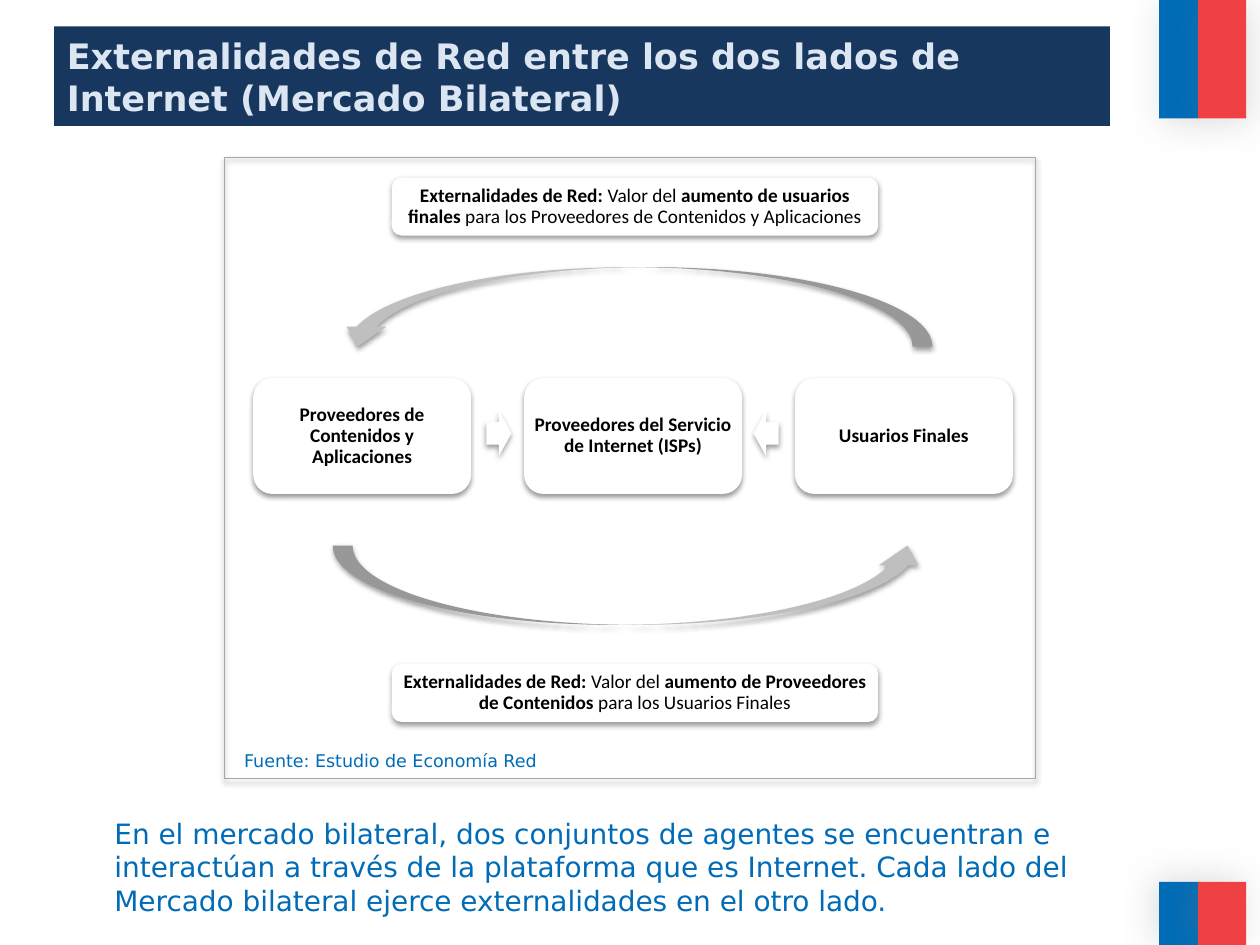
from lxml.etree import SubElement
from pptx import Presentation
from pptx.dml.color import RGBColor
from pptx.enum.shapes import MSO_SHAPE
from pptx.enum.text import MSO_ANCHOR, PP_ALIGN
from pptx.oxml.ns import qn
from pptx.util import Inches, Pt

rgb = RGBColor.from_string
BLUE, RED, NAVY = "006CB7", "EF4144", "17375E"
SOFT = ("000000", 38, 3.1, 1.6, 90)  # colour, opacity %, blur pt, distance pt, angle


def add_shape(kind, box, fill=None, shadow=SOFT):
    sp = s.shapes.add_shape(kind, *map(Inches, box))
    if fill:
        sp.fill.solid()
        sp.fill.fore_color.rgb = rgb(fill)
    else:
        sp.fill.background()
    sp.line.fill.background()
    sp.shadow.inherit = False
    color, opacity, blur, dist, angle = shadow
    effects = sp._element.spPr.find(qn("a:effectLst"))
    outer = SubElement(effects, qn("a:outerShdw"), blurRad=str(Pt(blur)),
                       dist=str(Pt(dist)), dir=str(angle * 60000), rotWithShape="0")
    clr = SubElement(outer, qn("a:srgbClr"), val=color)
    SubElement(clr, qn("a:alpha"), val=str(opacity * 1000))
    return sp


def write(sp, runs, font, size, color, frame=None, para=None):
    tf = sp.text_frame
    tf.word_wrap = True
    p = tf.paragraphs[0]
    for target, values in ((tf, frame or {}), (p, para or {})):
        for name, value in values.items():
            setattr(target, name, value)
    for text, bold in runs:
        r = p.add_run()
        r.text = text
        for name, value in {"name": font, "size": Pt(size), "bold": bold}.items():
            setattr(r.font, name, value)
        r.font.color.rgb = rgb(color)


prs = Presentation()
prs.slide_width, prs.slide_height = Inches(10), Inches(7.5)
s = prs.slides.add_slide(prs.slide_layouts[5])

# Two-colour bands at the right edge
for top, height, angle in ((0, 0.94, 45), (7, 0.5, 215)):
    for left, width, color in ((9.2, 0.31, BLUE), (9.51, 0.38, RED)):
        add_shape(MSO_SHAPE.RECTANGLE, (left, top, width, height), color,
                  ("808080", 25, 20, 3, angle))

# Title
title = s.shapes.title
title.left, title.top, title.width, title.height = map(Inches, (0.43, 0.21, 8.38, 0.79))
title.fill.solid()
title.fill.fore_color.rgb = rgb(NAVY)
write(title, [("Externalidades de Red entre los dos lados de Internet (Mercado Bilateral)", True)],
      "DejaVu Sans", 20, "DCE6F2", {"vertical_anchor": MSO_ANCHOR.MIDDLE},
      {"alignment": PP_ALIGN.LEFT})

# Diagram boxes: two captions and three agents
boxes = [
    ((3.11, 1.41, 3.86, 0.46), [
        ("Externalidades de Red: ", True), ("Valor del ", False),
        ("aumento de usuarios finales", True),
        (" para los Proveedores de Contenidos y Aplicaciones", False)]),
    ((3.11, 5.27, 3.86, 0.46), [
        ("Externalidades de Red: ", True), ("Valor del ", False),
        ("aumento de Proveedores de Contenidos", True),
        (" para los Usuarios Finales", False)]),
]
agents = ("Proveedores de Contenidos y Aplicaciones",
          "Proveedores del Servicio de Internet (ISPs)", "Usuarios Finales")
for i, agent in enumerate(agents):
    boxes.append(((2.01 + 2.15 * i, 3, 1.73, 0.92), [(agent, True)]))

margins = {f"margin_{side}": Inches(0.01) for side in ("left", "top", "right", "bottom")}
for box, runs in boxes:
    sp = add_shape(MSO_SHAPE.ROUNDED_RECTANGLE, box, "FFFFFF")
    write(sp, runs, "Calibri", 11, "000000",
          {"vertical_anchor": MSO_ANCHOR.MIDDLE, **margins},
          {"alignment": PP_ALIGN.CENTER, "line_spacing": 0.9})

# Curved arrows between the two sides
for left, top, turn in ((2.64, 4.33, 0), (2.68, 2.12, 180)):
    arrow = add_shape(MSO_SHAPE.CURVED_UP_ARROW, (left, top, 4.72, 0.63), "BFBFBF")
    arrow.rotation = turn

# Frame
frame = add_shape(MSO_SHAPE.RECTANGLE, (1.78, 1.25, 6.44, 4.93))
frame.line.color.rgb = rgb("A6A6A6")
frame.line.width = Pt(0.75)

# Block arrows towards the platform
for kind, left in ((MSO_SHAPE.RIGHT_ARROW, 3.86), (MSO_SHAPE.LEFT_ARROW, 5.98)):
    add_shape(kind, (left, 3.26, 0.2, 0.36), "FFFFFF")

# Source line and conclusion
notes = [
    ((1.84, 5.9, 3.2, 0.27), "Fuente: Estudio de Economía Red", 10,
     {"alignment": PP_ALIGN.JUSTIFY, "space_before": Pt(12)}),
    ((0.81, 6.43, 8.01, 0.91),
     "En el mercado bilateral, dos conjuntos de agentes se encuentran e interactúan "
     "a través de la plataforma que es Internet. Cada lado del Mercado bilateral "
     "ejerce externalidades en el otro lado.", 16, {}),
]
for box, text, size, para in notes:
    tb = s.shapes.add_textbox(*map(Inches, box))
    write(tb, [(text, False)], "DejaVu Sans", size, BLUE, para=para)

prs.save("out.pptx")
